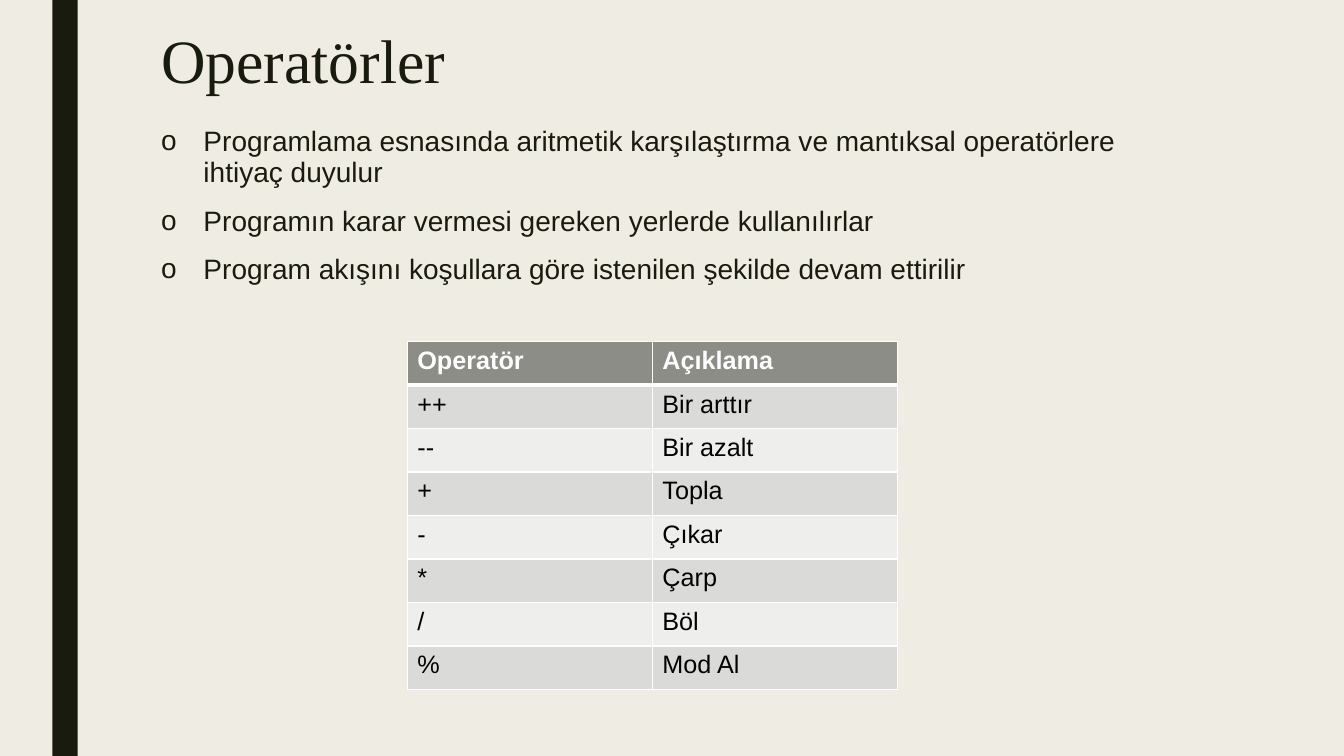
from dataclasses import dataclass

from lxml import etree
from pptx import Presentation
from pptx import util as u
from pptx.dml.color import RGBColor
from pptx.enum import shapes, text
from pptx.oxml import ns


@dataclass(frozen=True)
class Theme:
    back: str = "EFEDE3"
    ink: str = "191B0E"
    white: str = "FFFFFF"
    black: str = "000000"
    head: str = "8C8D86"
    odd: str = "DADBD9"
    even: str = "EEEEED"
    serif: str = "Times New Roman"
    sans: str = "Arial"
    title: int = 44
    body: int = 20
    cell: int = 18


@dataclass(frozen=True)
class Box:
    left: float
    top: float
    width: float
    height: float

    def size(self) -> tuple:
        return tuple(u.Inches(v) for v in
                     (self.left, self.top, self.width, self.height))


@dataclass(frozen=True)
class Style:
    font: str
    size: int
    color: str
    bold: bool = False


@dataclass(frozen=True)
class Row:
    sign: str
    note: str


THEME = Theme()
POINTS = [
    "Programlama esnasında aritmetik karşılaştırma ve mantıksal operatörlere ihtiyaç duyulur",
    "Programın karar vermesi gereken yerlerde kullanılırlar",
    "Program akışını koşullara göre istenilen şekilde devam ettirilir",
]
ROWS = [
    Row("Operatör", "Açıklama"),
    Row("++", "Bir arttır"),
    Row("--", "Bir azalt"),
    Row("+", "Topla"),
    Row("-", "Çıkar"),
    Row("*", "Çarp"),
    Row("/", "Böl"),
    Row("%", "Mod Al"),
]


def add_run(para, words: str, style: Style) -> None:
    run = para.add_run()
    run.text = words
    font = run.font
    font.name, font.size, font.bold = style.font, u.Pt(style.size), style.bold
    font.color.rgb = RGBColor.from_string(style.color)


def add_box(slide, box: Box, right: float = 0.1):
    frame = slide.shapes.add_textbox(*box.size()).text_frame
    frame.word_wrap = True
    frame.vertical_anchor = text.MSO_ANCHOR.TOP
    frame.margin_right = u.Inches(right)
    return frame


def add_bullet(para, mark: str) -> None:
    props = para._p.get_or_add_pPr()
    props.set("marL", str(u.Inches(0.42)))
    props.set("indent", str(-u.Inches(0.42)))
    etree.SubElement(props, ns.qn("a:buFont")).set("typeface", THEME.sans)
    etree.SubElement(props, ns.qn("a:buChar")).set("char", mark)


def add_list(slide, box: Box, items: list[str], style: Style) -> None:
    frame = add_box(slide, box, right=0.4)
    for i, item in enumerate(items):
        para = frame.add_paragraph() if i else frame.paragraphs[0]
        add_bullet(para, "o")
        para.line_spacing = 0.94
        para.space_after = u.Pt(2)
        if i:
            para.space_before = u.Pt(10)
        add_run(para, item, style)


def set_edge(cell, side: str, width: float) -> None:
    props = cell._tc.get_or_add_tcPr()
    line = etree.SubElement(props, ns.qn(f"a:{side}"))
    line.set("w", str(u.Pt(width)))
    fill = etree.SubElement(line, ns.qn("a:solidFill"))
    etree.SubElement(fill, ns.qn("a:srgbClr")).set("val", THEME.white)


def add_grid(slide, box: Box, rows: list[Row]) -> None:
    table = slide.shapes.add_table(len(rows), 2, *box.size()).table
    for col in table.columns:
        col.width = u.Inches(box.width / 2)
    for r, row in enumerate(rows):
        table.rows[r].height = u.Inches(box.height / len(rows))
        first = r == 0
        shade = THEME.head if first else THEME.odd if r % 2 else THEME.even
        color = THEME.white if first else THEME.black
        style = Style(THEME.sans, THEME.cell, color, first)
        for c, words in enumerate((row.sign, row.note)):
            cell = table.cell(r, c)
            # Borders go before the fill in the cell properties
            for side in ("lnL", "lnR", "lnT", "lnB"):
                thick = (first and side == "lnB") or (r == 1 and side == "lnT")
                set_edge(cell, side, 3 if thick else 1)
            cell.fill.solid()
            cell.fill.fore_color.rgb = RGBColor.from_string(shade)
            add_run(cell.text_frame.paragraphs[0], words, style)


def main() -> None:
    deck = Presentation()
    deck.slide_width, deck.slide_height = u.Inches(13.33), u.Inches(7.5)
    slide = deck.slides.add_slide(deck.slide_layouts[6])

    # Background and side bar
    back = slide.background.fill
    back.solid()
    back.fore_color.rgb = RGBColor.from_string(THEME.back)
    bar = slide.shapes.add_shape(shapes.MSO_SHAPE.RECTANGLE,
                                 *Box(0.52, 0, 0.25, 7.5).size())
    bar.shadow.inherit = False
    bar.fill.solid()
    bar.fill.fore_color.rgb = RGBColor.from_string(THEME.ink)
    bar.line.fill.background()

    # Title
    para = add_box(slide, Box(1.5, 0.26, 10.5, 1.62)).paragraphs[0]
    para.line_spacing = 0.89
    add_run(para, "Operatörler", Style(THEME.serif, THEME.title, THEME.ink))

    # Bullet list
    add_list(slide, Box(1.5, 1.2, 10.5, 3.92), POINTS,
             Style(THEME.sans, THEME.body, THEME.ink))

    # Operator table
    add_grid(slide, Box(4.04, 3.39, 4.86, 3.45), ROWS)

    deck.save("out.pptx")


if __name__ == "__main__":
    main()
